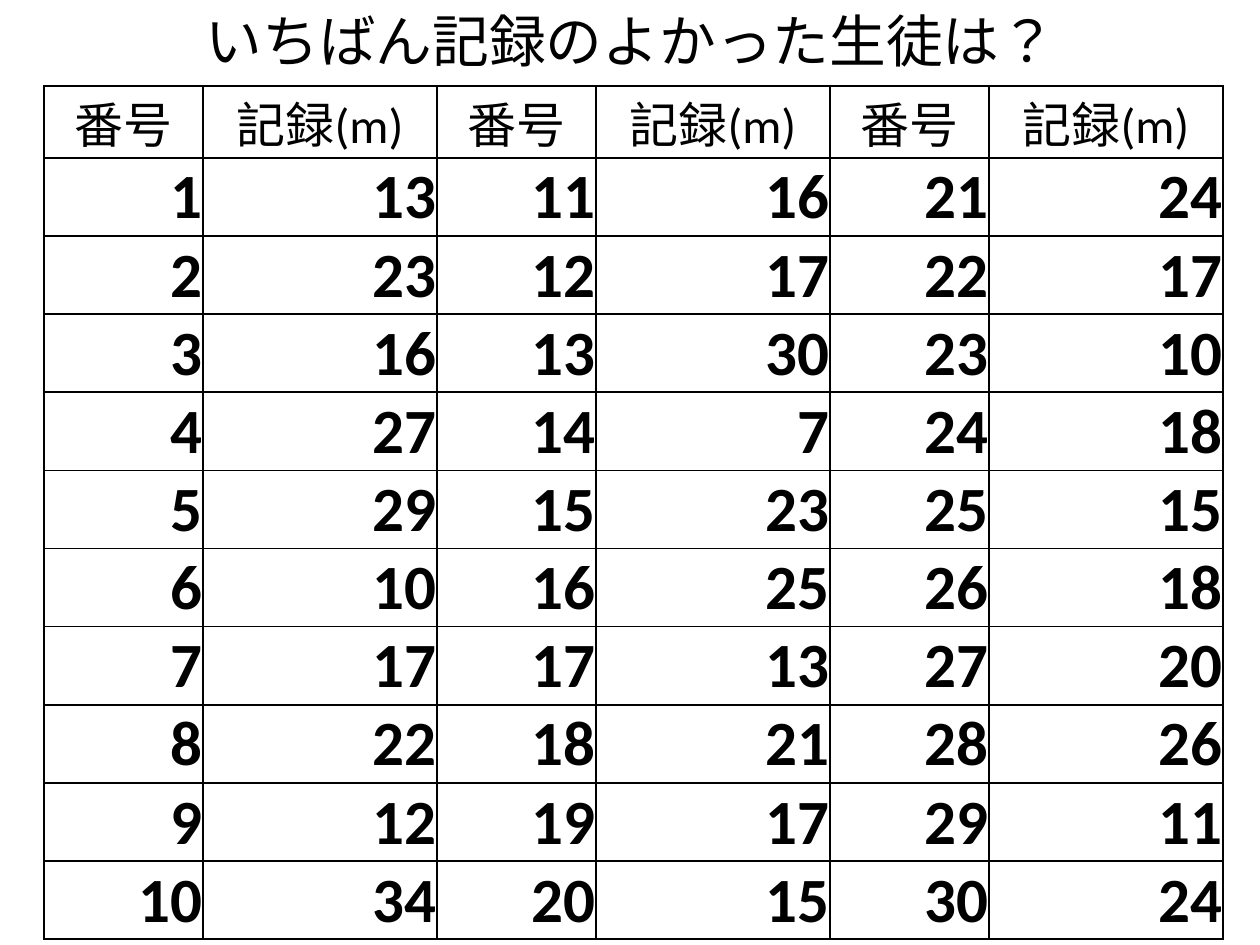
from dataclasses import dataclass

from lxml.etree import SubElement
from pptx import Presentation
from pptx.dml.color import RGBColor
from pptx.enum.lang import MSO_LANGUAGE_ID
from pptx.enum.text import MSO_ANCHOR, PP_ALIGN
from pptx.oxml.ns import qn
from pptx.util import Pt

PX = 914400 / 126  # EMU in one px


def px(n):
    return round(n * PX)


@dataclass(frozen=True)
class Theme:
    font: str = "Calibri"
    ink: str = "000000"
    title: float = 32.4
    header: float = 28
    body: float = 36
    border: float = 1


class SlideBuilder:
    def __init__(self, prs, theme):
        self.theme = theme
        self.s = prs.slides.add_slide(prs.slide_layouts[5])

    def style(self, p, size, align, bold=False):
        p.alignment = align
        p.font.name = self.theme.font
        p.font.size = Pt(size)
        p.font.bold = bold
        p.font.color.rgb = RGBColor.from_string(self.theme.ink)

    def title(self, text, x, y, w, h):
        sp = self.s.shapes.title
        sp.left, sp.top, sp.width, sp.height = map(px, (x, y, w, h))
        tf = sp.text_frame
        tf.text = text
        tf.word_wrap = True
        tf.vertical_anchor = MSO_ANCHOR.MIDDLE
        p = tf.paragraphs[0]
        self.style(p, self.theme.title, PP_ALIGN.CENTER)
        p.runs[0].font.language_id = MSO_LANGUAGE_ID.JAPANESE

    def borders(self, cell):
        tcPr = cell._tc.get_or_add_tcPr()
        for side in ("lnL", "lnR", "lnT", "lnB"):
            ln = SubElement(tcPr, qn(f"a:{side}"), w=str(Pt(self.theme.border)))
            fill = SubElement(ln, qn("a:solidFill"))
            SubElement(fill, qn("a:srgbClr"), val=self.theme.ink)

    def cell(self, cell, text, is_header):
        cell.margin_left = cell.margin_right = cell.margin_top = px(1)
        cell.margin_bottom = 0
        cell.vertical_anchor = MSO_ANCHOR.MIDDLE
        self.borders(cell)
        cell.fill.background()
        cell.text = text
        p = cell.text_frame.paragraphs[0]
        if is_header:
            self.style(p, self.theme.header, PP_ALIGN.CENTER)
        else:
            self.style(p, self.theme.body, PP_ALIGN.RIGHT, bold=True)

    def table(self, rows, x, y, widths, heights):
        frame = self.s.shapes.add_table(
            len(rows), len(widths), px(x), px(y), px(sum(widths)), px(sum(heights)))
        tbl = frame.table
        tbl.first_row = tbl.horz_banding = False
        for col, w in zip(tbl.columns, widths):
            col.width = px(w)
        for i, (row, h) in enumerate(zip(rows, heights)):
            tbl.rows[i].height = px(h)
            for j, text in enumerate(row):
                self.cell(tbl.cell(i, j), text, is_header=i == 0)


# Records (m) in number order, one line per block
RECORDS = [
    13, 23, 16, 27, 29, 10, 17, 22, 12, 34,
    16, 17, 30, 7, 23, 25, 13, 21, 17, 15,
    24, 17, 10, 18, 15, 18, 20, 26, 11, 24,
]
PER_BLOCK = 10
BLOCKS = len(RECORDS) // PER_BLOCK


def record_rows():
    rows = [["番号", "記録(m)"] * BLOCKS]
    for i in range(PER_BLOCK):
        indexes = range(i, len(RECORDS), PER_BLOCK)
        rows.append([str(v) for n in indexes for v in (n + 1, RECORDS[n])])
    return rows


def main():
    prs = Presentation()
    prs.slide_width, prs.slide_height = px(1260), px(945)
    slide = SlideBuilder(prs, Theme())

    # Title
    slide.title("いちばん記録のよかった生徒は？", 64, 0, 1134, 79)

    # Numbers and records, in side-by-side blocks
    slide.table(record_rows(), 44, 86,
                widths=[159, 234] * BLOCKS, heights=[69] + [77] * PER_BLOCK)

    prs.save("out.pptx")


if __name__ == "__main__":
    main()
